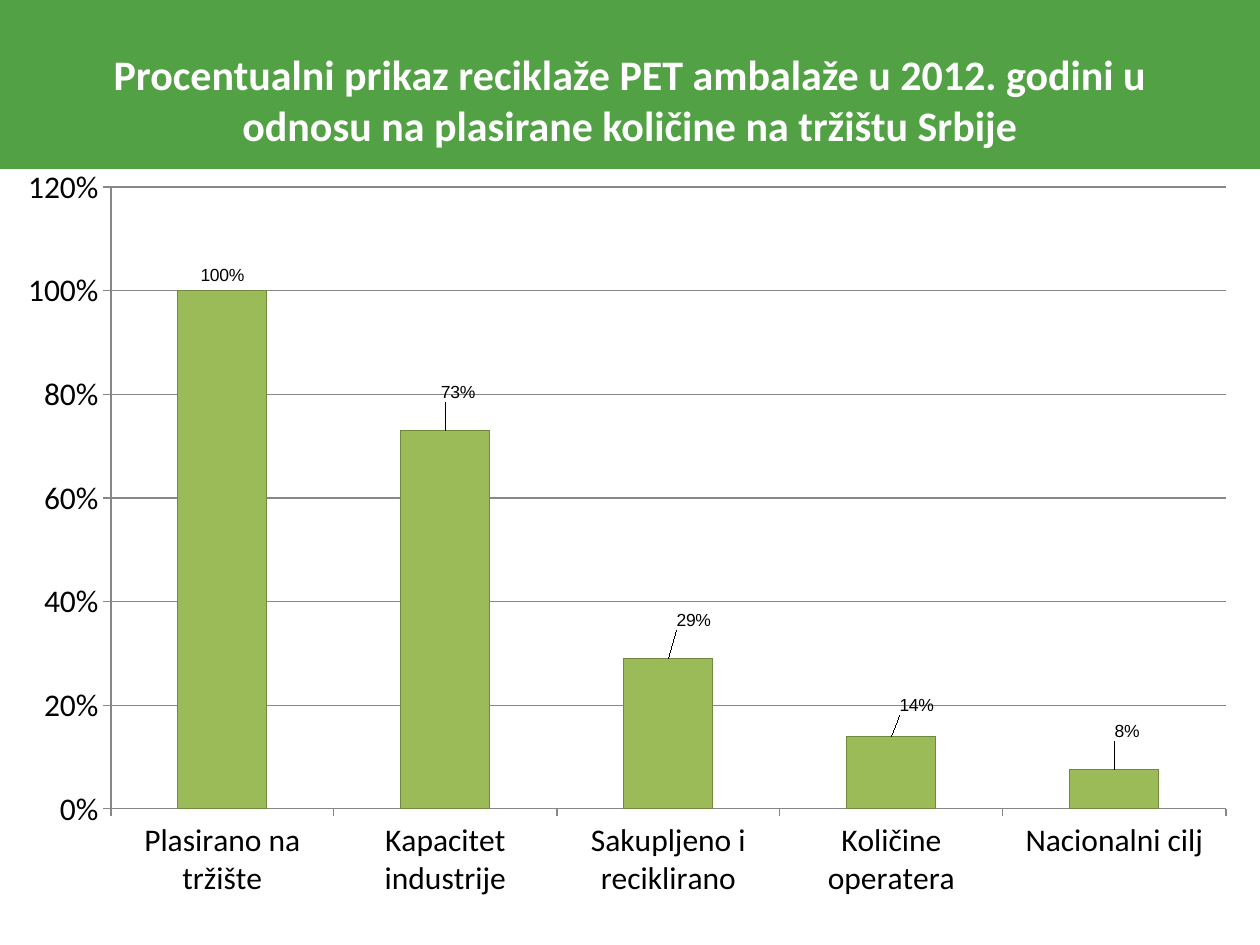
from lxml.etree import SubElement
from pptx import Presentation
from pptx.chart.data import CategoryChartData
from pptx.dml.color import RGBColor
from pptx.enum.chart import XL_CHART_TYPE, XL_LABEL_POSITION, XL_TICK_MARK
from pptx.enum.shapes import MSO_SHAPE
from pptx.enum.text import MSO_ANCHOR, PP_ALIGN
from pptx.oxml.ns import qn
from pptx.util import Inches, Pt

GREEN, BAR_FILL, BAR_LINE = "52A145", "9BBB59", "71893F"
GRID, BLACK, WHITE = "878787", "000000", "FFFFFF"
BANNER_HEIGHT = 1.33 / 7.5

# Category, share of the market, label offset as shares of the chart
RECYCLING = [
    ("Plasirano na tržište", 1, (0, 0)),
    ("Kapacitet industrije", 0.73, (0.01, -0.03)),
    ("Sakupljeno i reciklirano", 0.29, (0.02, -0.03)),
    ("Količine operatera", 0.14, (0.02, -0.02)),
    ("Nacionalni cilj", 0.075, (0.01, -0.03)),
]


def color(hex_string):
    return RGBColor.from_string(hex_string)


def add_layout(parent, index, **values):
    """Insert a manual chart layout; values are element names and contents."""
    layout = SubElement(parent, qn("c:layout"))
    parent.insert(index, layout)
    manual = SubElement(layout, qn("c:manualLayout"))
    for name, value in values.items():
        SubElement(manual, qn(f"c:{name}")).set("val", str(value))


class SlideBuilder:
    font_name = "Calibri"

    def __init__(self, presentation):
        self.width = presentation.slide_width
        self.height = presentation.slide_height
        self.slide = presentation.slides.add_slide(presentation.slide_layouts[5])

    def box(self, left, top, width, height):
        """Turn shares of the slide into lengths."""
        return (int(left * self.width), int(top * self.height),
                int(width * self.width), int(height * self.height))

    def style(self, font, size, hex_string, bold=False, name=None):
        font.name = name or self.font_name
        font.size = Pt(size)
        font.bold = bold
        font.color.rgb = color(hex_string)

    def banner(self, *shares):
        shape = self.slide.shapes.add_shape(MSO_SHAPE.RECTANGLE, *self.box(*shares))
        shape.shadow.inherit = False
        shape.fill.solid()
        shape.fill.fore_color.rgb = color(GREEN)
        shape.line.color.rgb = color(GREEN)
        shape.line.width = Pt(2)
        # Keep the banner behind the title placeholder
        self.slide.shapes.title.element.addprevious(shape.element)

    def title(self, text, *shares):
        shape = self.slide.shapes.title
        shape.left, shape.top, shape.width, shape.height = self.box(*shares)
        frame = shape.text_frame
        frame.text = text
        frame.word_wrap = True
        frame.vertical_anchor = MSO_ANCHOR.MIDDLE
        paragraph = frame.paragraphs[0]
        paragraph.alignment = PP_ALIGN.CENTER
        self.style(paragraph.runs[0].font, 24, WHITE, bold=True)

    def column_chart(self, rows, *shares):
        data = CategoryChartData(number_format="0%")
        data.categories = [category for category, _, _ in rows]
        data.add_series("Series 1", [value for _, value, _ in rows])
        chart = self.slide.shapes.add_chart(
            XL_CHART_TYPE.COLUMN_CLUSTERED, *self.box(*shares), data).chart
        chart.has_legend = False
        chart.has_title = False
        self.style(chart.font, 18, BLACK)

        # Axes and gridlines
        value_axis = chart.value_axis
        value_axis.minimum_scale, value_axis.maximum_scale = 0, 1.2
        value_axis.major_unit = 0.2
        value_axis.tick_labels.number_format = "0%"
        value_axis.tick_labels.number_format_is_linked = False
        value_axis.has_major_gridlines = True
        for axis in (value_axis, chart.category_axis):
            axis.major_tick_mark = XL_TICK_MARK.OUTSIDE
            axis.format.line.color.rgb = color(GRID)
        value_axis.major_gridlines.format.line.color.rgb = color(GRID)

        # Plot area
        plot_area = chart.plots[0]._element.getparent()
        for old_layout in plot_area.findall(qn("c:layout")):
            plot_area.remove(old_layout)
        add_layout(plot_area, 0, layoutTarget="inner", xMode="edge", yMode="edge",
                   x=0.088, y=0.025, w=0.885, h=0.8)

        # Columns
        plot = chart.plots[0]
        plot.vary_by_categories = False
        plot.gap_width = 150
        series = plot.series[0]
        series.format.fill.solid()
        series.format.fill.fore_color.rgb = color(BAR_FILL)
        series.format.line.color.rgb = color(BAR_LINE)

        # Value labels, nudged off the columns
        for index in range(len(rows)):
            label = series.points[index].data_label
            self.style(label.font, 10, BLACK, name="Arial")
            label.position = XL_LABEL_POSITION.OUTSIDE_END
        labels = series._element.findall(".//" + qn("c:dLbl"))
        for label, (_, _, (x, y)) in zip(labels, rows):
            if x or y:
                add_layout(label, 1, x=x, y=y)


def main():
    presentation = Presentation()
    presentation.slide_width, presentation.slide_height = Inches(10), Inches(7.5)
    builder = SlideBuilder(presentation)
    builder.banner(0, 0, 1, BANNER_HEIGHT)
    builder.title("Procentualni prikaz reciklaže PET ambalaže u 2012. godini u "
                  "odnosu na plasirane količine na tržištu Srbije",
                  0.05, 0.04, 0.9, 0.13)
    builder.column_chart(RECYCLING, 0, BANNER_HEIGHT, 1, 1 - BANNER_HEIGHT)
    presentation.save("out.pptx")


if __name__ == "__main__":
    main()
